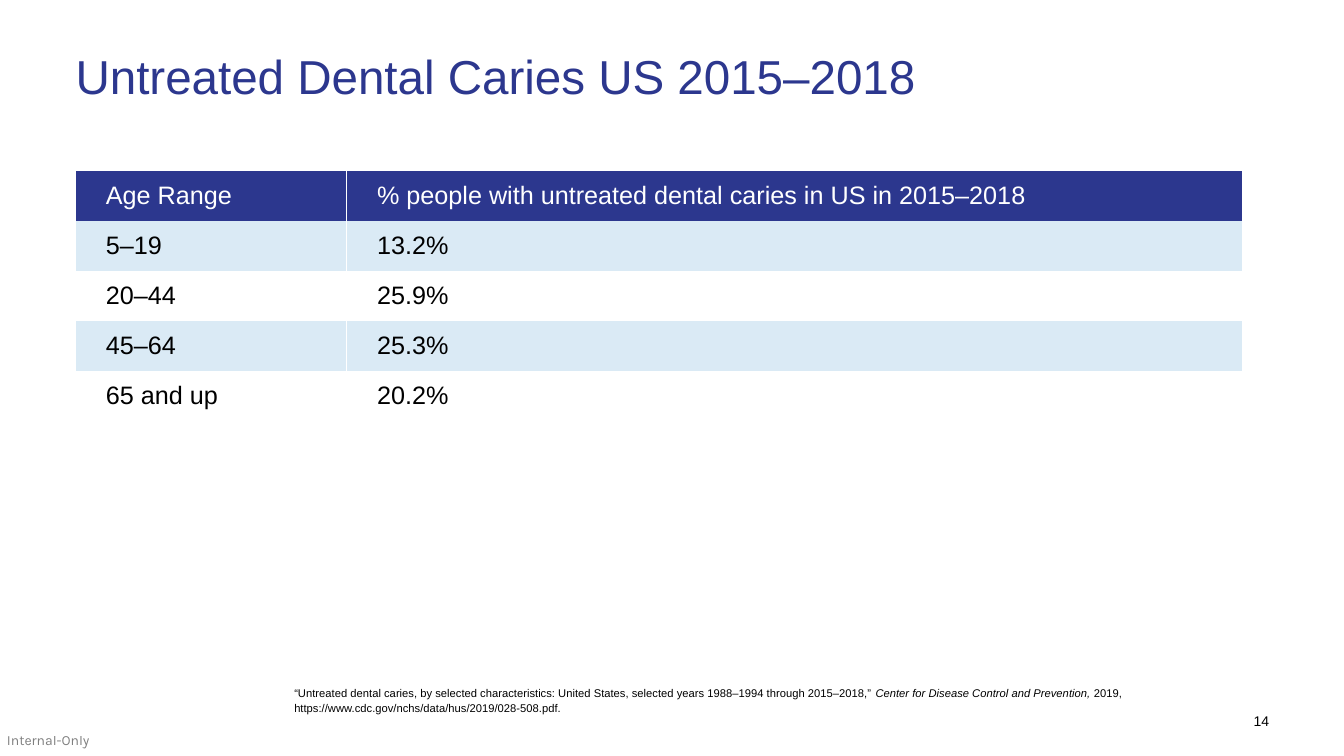
from lxml.etree import SubElement
from pptx import Presentation
from pptx.dml.color import RGBColor
from pptx.enum.text import MSO_ANCHOR, PP_ALIGN
from pptx.oxml.ns import qn
from pptx.util import Pt

NAVY = RGBColor(0x2C, 0x37, 0x8E)
PALE_BLUE = RGBColor(0xDA, 0xEA, 0xF5)
WHITE = RGBColor(0xFF, 0xFF, 0xFF)
BLACK = RGBColor(0, 0, 0)
NO_STYLE = "{2D5ABB26-0587-4C30-8999-92F81FD0307C}"

# Content
TITLE = "Untreated Dental Caries US 2015–2018"
ROWS = [
    ("Age Range", "% people with untreated dental caries in US in 2015–2018"),
    ("5–19", "13.2%"),
    ("20–44", "25.9%"),
    ("45–64", "25.3%"),
    ("65 and up", "20.2%"),
]
SOURCE = [
    ("“Untreated dental caries, by selected characteristics: United States, "
     "selected years 1988–1994 through 2015–2018,” ", False),
    ("Center for Disease Control and Prevention,", True),
    (" 2019, https://www.cdc.gov/nchs/data/hus/2019/028-508.pdf.", False),
]
PAGE_NUMBER = "14"
LABEL = "Internal-Only"

# Layout, in points
LEFT = 54
TABLE_TOP = 122.3
COL_WIDTHS = (193.7, 639.6)
ROW_HEIGHT = 35.7
CELL_MARGINS = {"margin_left": 21.6, "margin_right": 7.2,
                "margin_top": 3.6, "margin_bottom": 3.6}


def add_run(p, text, size, color=BLACK, name="Arial", italic=False):
    r = p.add_run()
    r.text = text
    fmt = {"size": Pt(size), "name": name, "italic": italic}
    for key, value in fmt.items():
        setattr(r.font, key, value)
    r.font.color.rgb = color
    return r


def add_text(slide, box, runs, spacing=1.0, align=PP_ALIGN.LEFT,
             anchor=MSO_ANCHOR.TOP, bottom=0):
    tf = slide.shapes.add_textbox(*map(Pt, box)).text_frame
    fmt = {"word_wrap": True, "vertical_anchor": anchor, "margin_left": 0,
           "margin_right": 0, "margin_top": 0, "margin_bottom": Pt(bottom)}
    for key, value in fmt.items():
        setattr(tf, key, value)
    p = tf.paragraphs[0]
    p.alignment, p.line_spacing = align, spacing
    return [add_run(p, **run) for run in runs]


def add_border(cell, tag):
    # Side borders come before the fill in the cell properties
    tc_pr = cell._tc.get_or_add_tcPr()
    ln = SubElement(tc_pr, qn(tag), w=str(Pt(1)))
    fill = SubElement(ln, qn("a:solidFill"))
    SubElement(fill, qn("a:srgbClr"), val=str(WHITE))


def add_caries_table(slide):
    size = (sum(COL_WIDTHS), ROW_HEIGHT * len(ROWS))
    frame = slide.shapes.add_table(len(ROWS), len(COL_WIDTHS), Pt(LEFT), Pt(TABLE_TOP),
                                   *map(Pt, size))
    table = frame.table
    table.horz_banding = False
    table._tbl.tblPr.find(qn("a:tableStyleId")).text = NO_STYLE
    for column, width in zip(table.columns, COL_WIDTHS):
        column.width = Pt(width)
    for i, values in enumerate(ROWS):
        table.rows[i].height = Pt(ROW_HEIGHT)
        for j, text in enumerate(values):
            cell = table.cell(i, j)
            cell.vertical_anchor = MSO_ANCHOR.MIDDLE
            for key, value in CELL_MARGINS.items():
                setattr(cell, key, Pt(value))
            for tag in ("a:lnL", "a:lnR")[1 - j:]:
                add_border(cell, tag)
            if i == 0 or i % 2:
                cell.fill.solid()
                cell.fill.fore_color.rgb = PALE_BLUE if i else NAVY
            else:
                cell.fill.background()
            add_run(cell.text_frame.paragraphs[0], text, 18, BLACK if i else WHITE)


def main():
    prs = Presentation()
    prs.slide_width, prs.slide_height = Pt(960), Pt(540)
    slide = prs.slides.add_slide(prs.slide_layouts[6])

    # Page number and half-transparent label
    add_text(slide, (864.7, 509, 41.8, 12.2), [{"text": PAGE_NUMBER, "size": 10}],
             align=PP_ALIGN.RIGHT)
    label = add_text(slide, (5, 522.7, 90, 12.2),
                     [{"text": LABEL, "size": 10, "name": "Karla"}])[0]
    color = label._r.rPr.find(qn("a:solidFill")).find(qn("a:srgbClr"))
    SubElement(color, qn("a:alpha"), val="50000")

    # Title, table and source
    add_text(slide, (LEFT, 38.2, 851.8, 76.3),
             [{"text": TITLE, "size": 34, "color": NAVY}], spacing=0.9)
    add_caries_table(slide)
    add_text(slide, (210.2, 492.5, 639.4, 28.1),
             [{"text": text, "size": 8, "italic": italic} for text, italic in SOURCE],
             spacing=1.1, anchor=MSO_ANCHOR.BOTTOM, bottom=10)
    prs.save("out.pptx")


if __name__ == "__main__":
    main()
